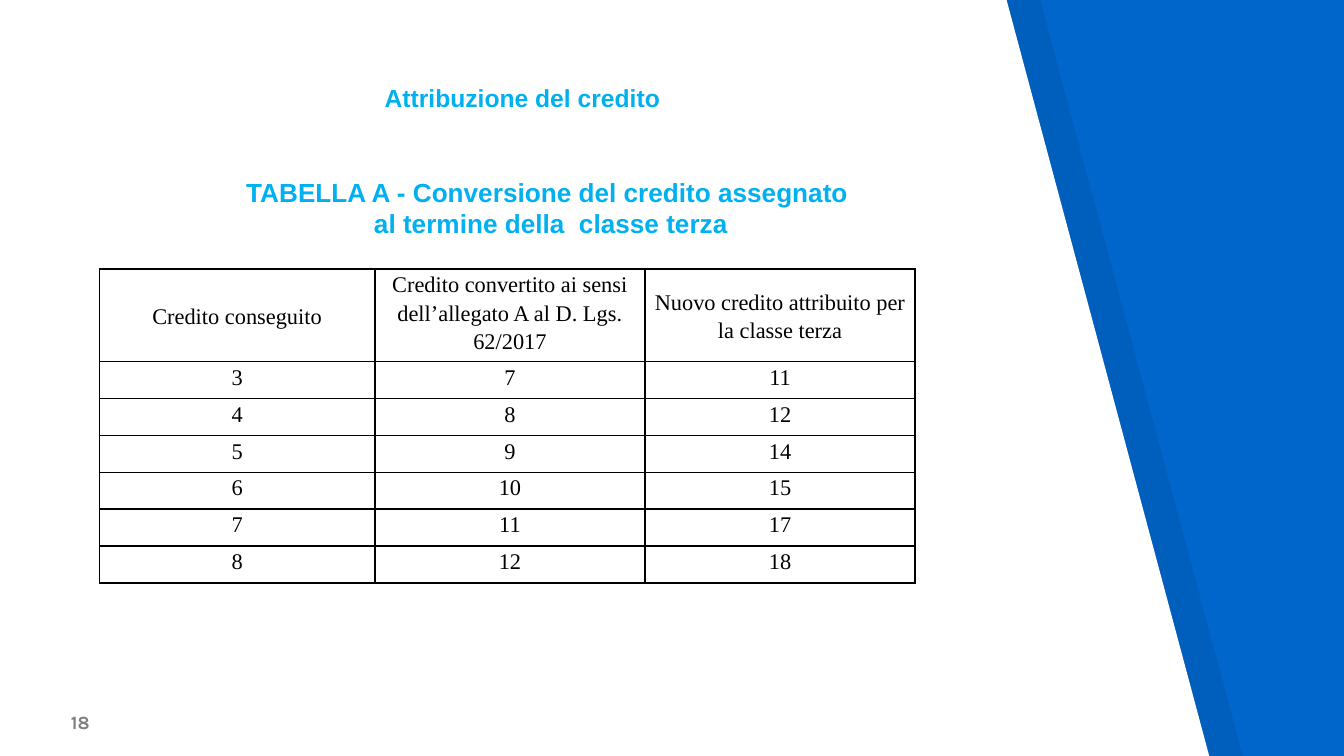
from lxml.etree import SubElement
from pptx import Presentation
from pptx.dml.color import RGBColor
from pptx.enum.text import MSO_ANCHOR as Anchor, MSO_AUTO_SIZE as AutoSize, PP_ALIGN as Align
from pptx.oxml.ns import qn
from pptx.util import Inches, Pt

WIDTH = 10
HEIGHT = WIDTH * 9 / 16
BLUE, CYAN, BLACK, WHITE, GREY = "0066CC", "00B0F0", "000000", "FFFFFF", "808080"
COLUMNS = (2.05, 2.01, 2.01)
TABLE_HEIGHT, HEADER_HEIGHT = 2.31, 0.66
HEADERS = (
    "Credito conseguito",
    "Credito convertito ai sensi dell’allegato A al D. Lgs. 62/2017",
    "Nuovo credito attribuito per la classe terza",
)
CREDITS = ((3, 7, 11), (4, 8, 12), (5, 9, 14), (6, 10, 15), (7, 11, 17), (8, 12, 18))


def paint(color_format, color):
    color_format.rgb = RGBColor.from_string(color)


def fill_solid(fill, color):
    fill.solid()
    paint(fill.fore_color, color)


def write(frame, text, font="Arial", size=14, color=CYAN, bold=False,
          align=Align.CENTER, spacing=None):
    for index, line in enumerate(text.split("\n")):
        paragraph = frame.add_paragraph() if index else frame.paragraphs[0]
        paragraph.alignment = align
        paragraph.line_spacing = spacing
        run = paragraph.add_run()
        run.text = line
        run.font.name = font
        run.font.size = Pt(size)
        run.font.bold = bold
        paint(run.font.color, color)


def set_margins(target, inset):
    target.margin_left = target.margin_right = Inches(inset)
    target.margin_top = target.margin_bottom = Inches(inset)


def add_text(slide, left, top, width, height, text, wrap=True, anchor=Anchor.TOP,
             fit=AutoSize.NONE, **text_format):
    box = slide.shapes.add_textbox(*map(Inches, (left, top, width, height)))
    frame = box.text_frame
    frame.word_wrap = wrap
    frame.vertical_anchor = anchor
    frame.auto_size = fit
    set_margins(frame, 0.1)
    write(frame, text, **text_format)


def add_panel(slide, left, top_right, bottom_right, color, opacity=100):
    top, bottom = -0.01, HEIGHT + 0.01
    corners = [(left, bottom), (bottom_right, bottom), (top_right, 0)]
    builder = slide.shapes.build_freeform(Inches(left), Inches(top))
    builder.add_line_segments([(Inches(x), Inches(y)) for x, y in corners], close=True)
    panel = builder.convert_to_shape()
    panel.shadow.inherit = False
    panel.line.fill.background()
    fill_solid(panel.fill, color)
    if opacity < 100:
        color_element = panel.fill._xPr.find(qn("a:solidFill"))[0]
        SubElement(color_element, qn("a:alpha"), val=str(opacity * 1000))


def add_borders(cell, color, width):
    properties = cell._tc.get_or_add_tcPr()
    for position, side in enumerate(("a:lnL", "a:lnR", "a:lnT", "a:lnB")):
        line = SubElement(properties, qn(side), w=str(Pt(width)))
        fill = SubElement(line, qn("a:solidFill"))
        SubElement(fill, qn("a:srgbClr"), val=color)
        properties.insert(position, line)


def add_credit_table(slide, left, top):
    rows = (HEADERS, *CREDITS)
    row_height = (TABLE_HEIGHT - HEADER_HEIGHT) / len(CREDITS)
    table = slide.shapes.add_table(
        len(rows), len(COLUMNS), *map(Inches, (left, top, sum(COLUMNS), TABLE_HEIGHT))).table
    table.first_row = table.horz_banding = False
    for column, width in zip(table.columns, COLUMNS):
        column.width = Inches(width)
    for row_index, values in enumerate(rows):
        table.rows[row_index].height = Inches(row_height if row_index else HEADER_HEIGHT)
        for column_index, value in enumerate(values):
            cell = table.cell(row_index, column_index)
            cell.fill.background()
            add_borders(cell, BLACK, 1)
            set_margins(cell, 0)
            is_centred = row_index == 0 and column_index != 1
            cell.vertical_anchor = Anchor.MIDDLE if is_centred else Anchor.TOP
            write(cell.text_frame, str(value), font="Times New Roman", size=12,
                  color=BLACK, spacing=1.15)


def main():
    presentation = Presentation()
    presentation.slide_width, presentation.slide_height = Inches(WIDTH), Inches(HEIGHT)
    slide = presentation.slides.add_slide(presentation.slide_layouts[6])
    fill_solid(slide.background.fill, BLUE)
    add_panel(slide, 0.25, 7.74, 9.25, BLACK, opacity=7)
    add_panel(slide, 0, 7.49, 9, WHITE)
    add_text(slide, 0.43, 5.17, 0.37, 0.37, "18", font="Karla", size=10, color=GREY,
             bold=True, align=Align.LEFT, anchor=Anchor.BOTTOM, wrap=False,
             fit=AutoSize.SHAPE_TO_FIT_TEXT)
    add_text(slide, 0.54, 0.52, 6.69, 0.68, "Attribuzione del credito", size=13.2, bold=True)
    add_text(slide, 0.72, 1.21, 6.76, 3.69,
             "TABELLA A - Conversione del credito assegnato \nal termine della  classe terza",
             bold=True)
    add_credit_table(slide, 0.74, 2)
    presentation.save("out.pptx")


if __name__ == "__main__":
    main()
